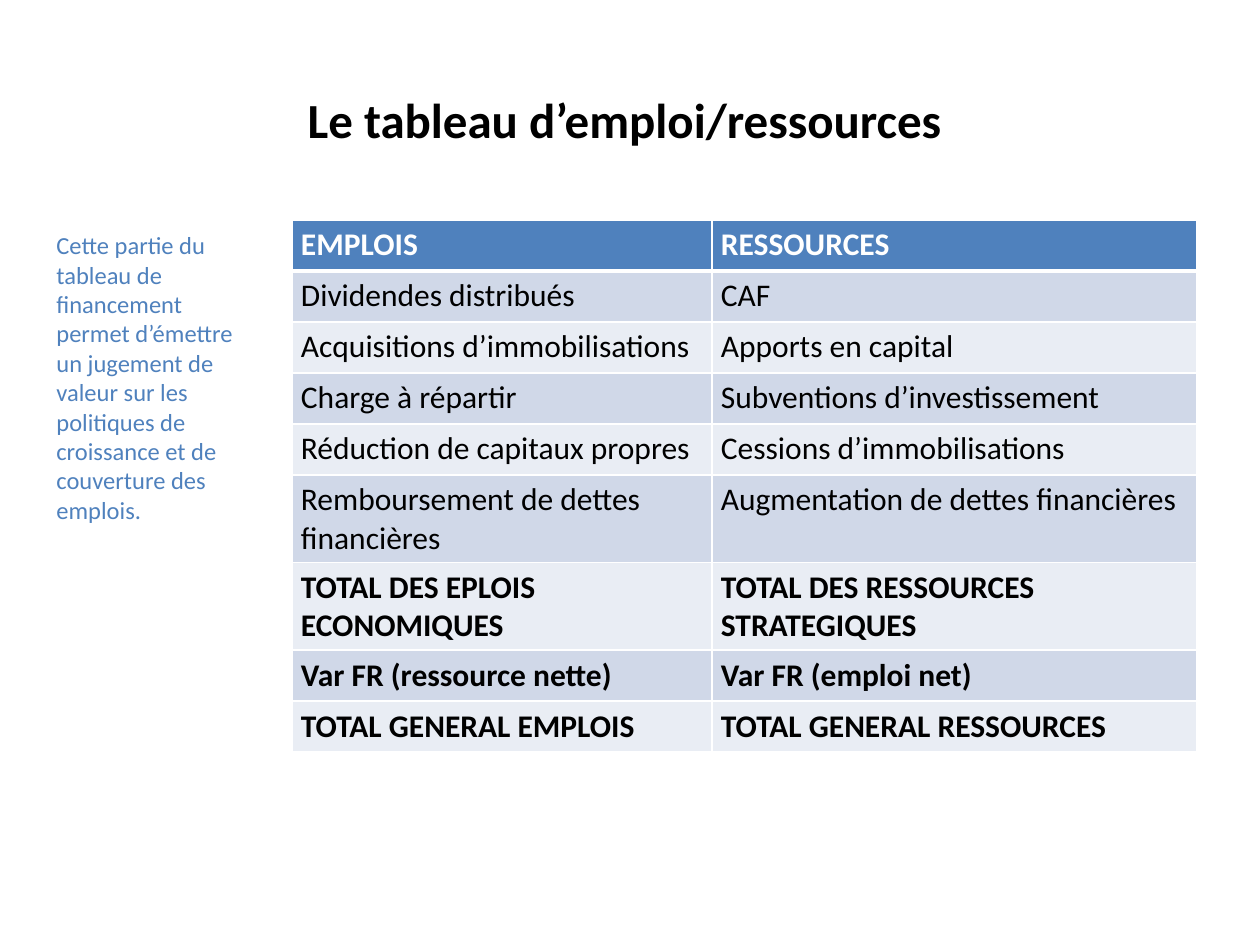
from pptx import Presentation
from pptx import util as u
from pptx.dml.color import RGBColor
from pptx.enum import text
from pptx.oxml import parse_xml
from pptx.oxml.ns import nsdecls
from dataclasses import dataclass


@dataclass(frozen=True)
class Theme:
    font: str = "Calibri"
    black: str = "000000"
    white: str = "FFFFFF"
    blue: str = "4F81BD"
    bands: tuple = ("D0D8E8", "E9EDF4")
    title: int = 28
    table: int = 18
    note: int = 14


THEME = Theme()
SCALE = u.Inches(1) // 126
COLS = (420, 485)
ROW = 51
TOTALS = 6  # first row set in bold below the header

TITLE = "Le tableau d’emploi/ressources"
NOTE = (
    "Cette partie du tableau de financement permet d’émettre un jugement de "
    "valeur sur les politiques de croissance et de couverture des emplois."
)
ROWS = (
    ("EMPLOIS", "RESSOURCES"),
    ("Dividendes distribués", "CAF"),
    ("Acquisitions d’immobilisations", "Apports en capital"),
    ("Charge à répartir", "Subventions d’investissement"),
    ("Réduction de capitaux propres", "Cessions d’immobilisations"),
    ("Remboursement de dettes financières", "Augmentation de dettes financières"),
    ("TOTAL DES EPLOIS ECONOMIQUES", "TOTAL DES RESSOURCES STRATEGIQUES"),
    ("Var FR (ressource nette)", "Var FR (emploi net)"),
    ("TOTAL GENERAL EMPLOIS", "TOTAL GENERAL RESSOURCES"),
)


def px(n):
    return u.Emu(n * SCALE)


def add_run(para, words, size, color, bold=False):
    run = para.add_run()
    run.text = words
    font = run.font
    font.name = THEME.font
    font.size = u.Pt(size)
    font.bold = bold
    font.color.rgb = RGBColor.from_string(color)


def add_text(slide, box, words, size, color, bold=False):
    frame = slide.shapes.add_textbox(*map(px, box)).text_frame
    frame.word_wrap = True
    add_run(frame.paragraphs[0], words, size, color, bold)
    return frame


def set_edges(cell, top, bottom):
    """Draw white cell borders; top and bottom are widths in points."""
    props = cell._tc.get_or_add_tcPr()
    edges = (("lnL", 1), ("lnR", 1), ("lnT", top), ("lnB", bottom))
    for spot, (tag, width) in enumerate(edges):
        props.insert(spot, parse_xml(
            f'<a:{tag} {nsdecls("a")} w="{u.Pt(width)}"><a:solidFill>'
            f'<a:srgbClr val="{THEME.white}"/></a:solidFill></a:{tag}>'
        ))


def fill_cell(cell, row, words):
    head = row == 0
    cell.margin_left = cell.margin_right = px(9)
    cell.margin_top = cell.margin_bottom = px(6)
    cell.fill.solid()
    shade = THEME.blue if head else THEME.bands[(row - 1) % 2]
    cell.fill.fore_color.rgb = RGBColor.from_string(shade)
    set_edges(cell, top=3 if row == 1 else 1, bottom=3 if head else 1)
    color = THEME.white if head else THEME.black
    add_run(cell.text_frame.paragraphs[0], words, THEME.table, color,
            head or row >= TOTALS)


def add_grid(slide, left, top):
    size = (sum(COLS), ROW * len(ROWS))
    grid = slide.shapes.add_table(
        len(ROWS), len(COLS), *map(px, (left, top, *size))).table
    for col, width in zip(grid.columns, COLS):
        col.width = px(width)
    for r, line in enumerate(ROWS):
        grid.rows[r].height = px(ROW)
        for c, words in enumerate(line):
            fill_cell(grid.cell(r, c), r, words)


def main():
    deck = Presentation()
    deck.slide_width, deck.slide_height = px(1260), px(945)
    slide = deck.slides.add_slide(deck.slide_layouts[6])

    title = add_text(slide, (63, 38, 1123, 117), TITLE, THEME.title,
                     THEME.black, True)
    title.vertical_anchor = text.MSO_ANCHOR.BOTTOM
    title.paragraphs[0].alignment = text.PP_ALIGN.CENTER

    add_grid(slide, 292, 220)

    note = add_text(slide, (44, 224, 218, 456), NOTE, THEME.note, THEME.blue)
    note.paragraphs[0].space_before = u.Pt(3)

    deck.save("out.pptx")


if __name__ == "__main__":
    main()
